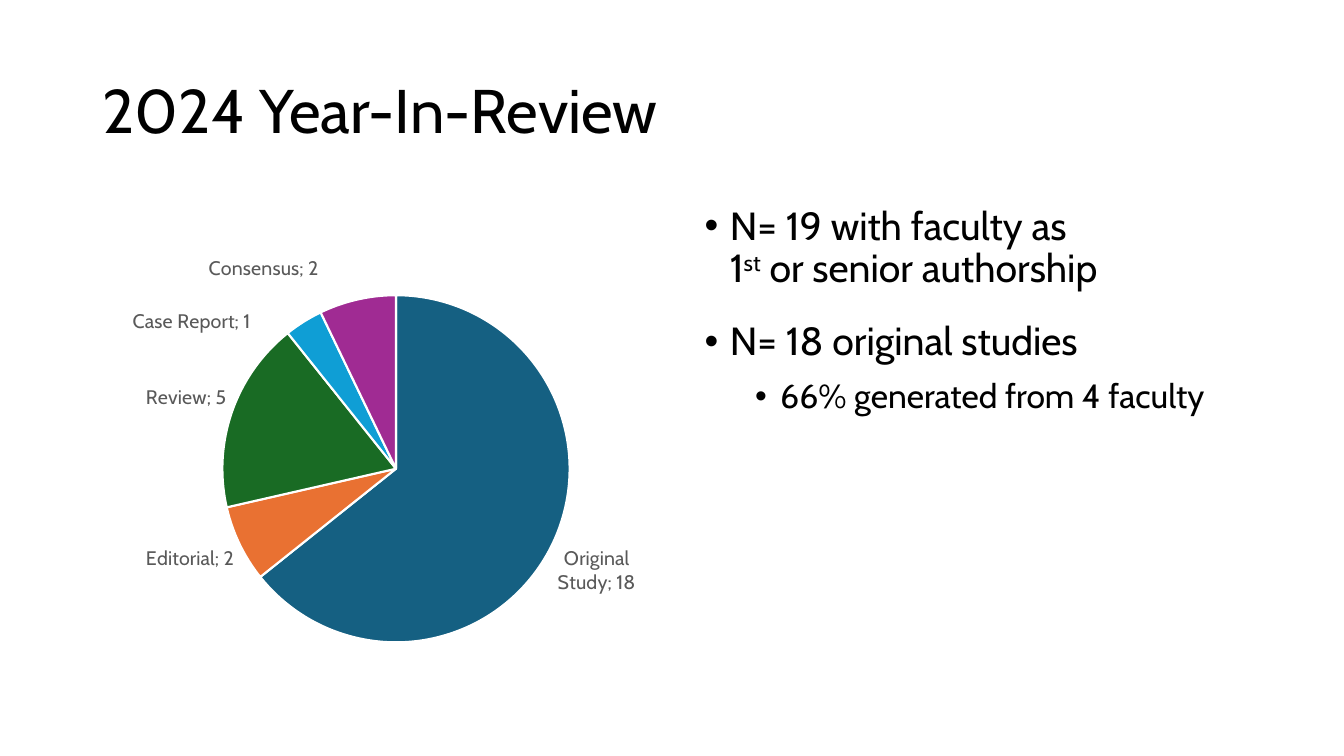
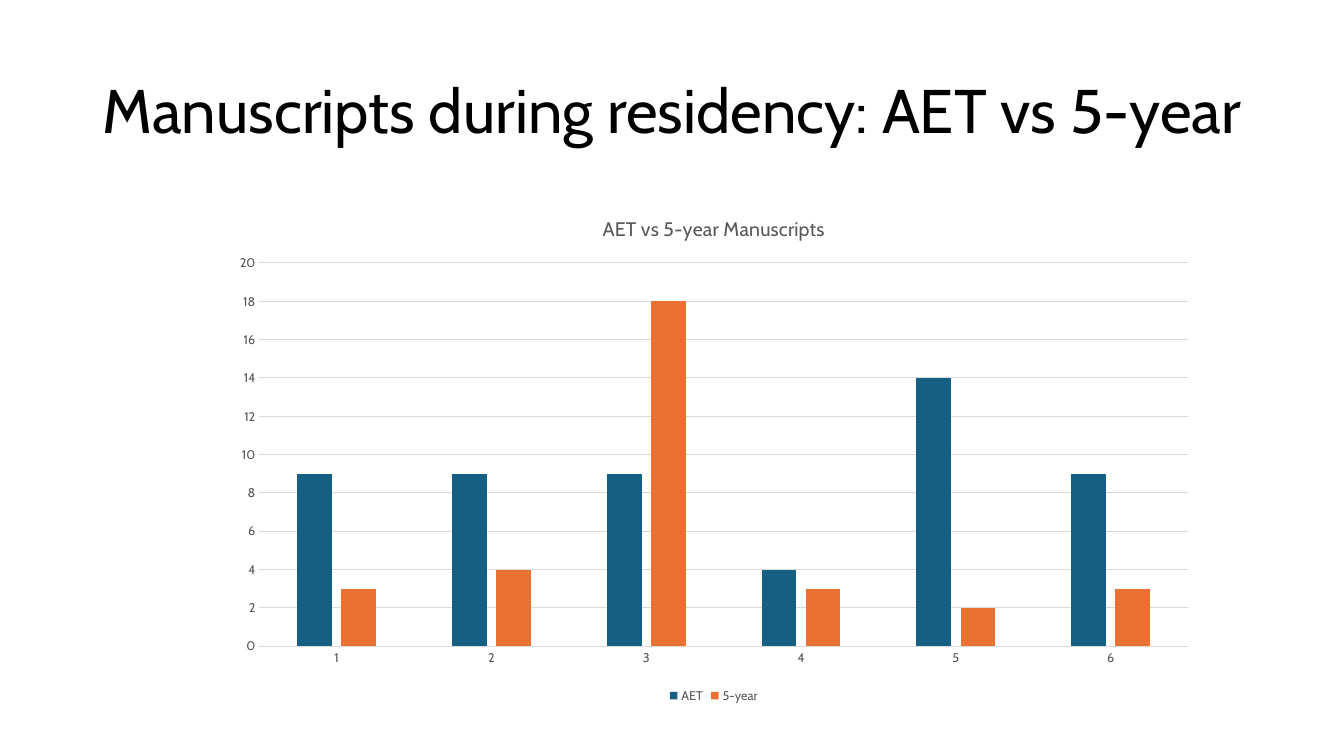
import dataclasses

import lxml.etree
import pptx
import pptx.chart.data
import pptx.dml.color
import pptx.enum.chart
import pptx.enum.text
import pptx.oxml.ns
import pptx.util

PX = 9144  # EMU, 100 px to the inch


@dataclasses.dataclass(frozen=True)
class Theme:
    font: str = "Cabin"
    ink: str = "000000"
    grey: str = "595959"
    grid: str = "D9D9D9"
    white: str = "FFFFFF"
    accents: tuple = ("156082", "E97132", "196B24", "0F9ED5", "A02B93")
    title: int = 44
    body: tuple = (28, 24)
    label: int = 14
    axis: int = 9
    line_spacing: float = 0.9


def rgb(code):
    return pptx.dml.color.RGBColor.from_string(code)


def apply(obj, **values):
    for name, value in values.items():
        setattr(obj, name, value)


def sub(parent, tag, **attrs):
    return lxml.etree.SubElement(parent, pptx.oxml.ns.qn(tag), attrs)


def layout(**values):
    """Return a c:layout element; plot areas have a width, labels only an offset."""
    node = lxml.etree.Element(pptx.oxml.ns.qn("c:layout"))
    manual = sub(node, "c:manualLayout")
    if "w" in values:
        sub(manual, "c:layoutTarget", val="inner")
        sub(manual, "c:xMode", val="edge")
        sub(manual, "c:yMode", val="edge")
    for name, value in values.items():
        sub(manual, f"c:{name}", val=str(value))
    return node


class Deck:
    """Holds the theme and the current slide."""

    def __init__(self, prs, theme):
        self.prs, self.theme, self.slide = prs, theme, None
        apply(prs, slide_width=1333 * PX, slide_height=750 * PX)

    def new_slide(self, title):
        self.slide = self.prs.slides.add_slide(self.prs.slide_layouts[6])
        tf = self.text_frame(92, 40, 1150, 145)
        tf.vertical_anchor = pptx.enum.text.MSO_ANCHOR.MIDDLE
        p = tf.paragraphs[0]
        p.line_spacing = self.theme.line_spacing
        self.run(p, title, self.theme.title)

    def text_frame(self, *box):
        tf = self.slide.shapes.add_textbox(*(n * PX for n in box)).text_frame
        tf.word_wrap = True
        return tf

    def style(self, font, size, color):
        apply(font, name=self.theme.font, size=pptx.util.Pt(size), bold=False)
        font.color.rgb = rgb(color)

    def run(self, p, text, size, raised=False):
        r = p.add_run()
        r.text = text
        self.style(r.font, size, self.theme.ink)
        if raised:
            r.font._element.set("baseline", "30000")

    def bullets(self, box, items):
        """Items are (level, space before, space after, lines of (text, raised) runs)."""
        tf = self.text_frame(*box)
        for i, (level, before, after, lines) in enumerate(items):
            p = tf.add_paragraph() if i else tf.paragraphs[0]
            apply(p, level=level, line_spacing=self.theme.line_spacing,
                  space_before=pptx.util.Pt(before), space_after=pptx.util.Pt(after))
            pPr = p._p.get_or_add_pPr()
            pPr.set("marL", str((25 + 50 * level) * PX))
            pPr.set("indent", str(-25 * PX))
            sub(pPr, "a:buFont", typeface="Arial")
            sub(pPr, "a:buChar", char="•")
            for n, line in enumerate(lines):
                if n:
                    p.add_line_break()
                for text, raised in line:
                    self.run(p, text, self.theme.body[level], raised)

    def chart(self, kind, box, categories, series, plot_area):
        data = pptx.chart.data.CategoryChartData()
        data.categories = categories
        for name, values in series.items():
            data.add_series(name, values)
        chart = self.slide.shapes.add_chart(
            kind, *(n * PX for n in box), data).chart
        apply(chart, has_title=False, has_legend=False)
        self.style(chart.font, 10, self.theme.ink)
        area = next(chart.element.iter(pptx.oxml.ns.qn("c:plotArea")))
        for old in area.findall(pptx.oxml.ns.qn("c:layout")):
            area.remove(old)
        area.insert(0, layout(**plot_area))
        return chart

    def pie(self, box, values, plot_area, label_offsets):
        """Label offsets map a slice name to its (x, y) shift as a share of the chart."""
        chart = self.chart(pptx.enum.chart.XL_CHART_TYPE.PIE, box, list(values),
                           {"Series 1": list(values.values())}, plot_area)
        ser = chart.plots[0].series[0]
        outside = pptx.enum.chart.XL_LABEL_POSITION.OUTSIDE_END
        labels = ser.data_labels
        apply(labels, show_value=True, show_category_name=True, position=outside)
        self.style(labels.font, self.theme.label, self.theme.grey)
        for i, (name, color) in enumerate(zip(values, self.theme.accents)):
            point = ser.points[i]
            self.fill(point, color)
            point.format.line.color.rgb = rgb(self.theme.white)
            point.format.line.width = pptx.util.Pt(1.5)
            if name in label_offsets:
                label = point.data_label
                self.style(label.font, self.theme.label, self.theme.grey)
                label.position = outside
        moved = chart.element.iter(pptx.oxml.ns.qn("c:dLbl"))
        for dLbl, (x, y) in zip(moved, label_offsets.values()):
            dLbl.insert(1, layout(x=x, y=y))
            dLbl.find(pptx.oxml.ns.qn("c:showCatName")).set("val", "1")
        for node in list(chart.element.iter(pptx.oxml.ns.qn("c:showBubbleSize"))):
            separator = lxml.etree.Element(pptx.oxml.ns.qn("c:separator"))
            separator.text = "; "
            node.addnext(separator)
        for node in chart.element.iter(pptx.oxml.ns.qn("c:showLeaderLines")):
            node.set("val", "0")

    def columns(self, box, title, categories, series, plot_area):
        chart = self.chart(pptx.enum.chart.XL_CHART_TYPE.COLUMN_CLUSTERED, box,
                           categories, series, plot_area)
        tf = chart.chart_title.text_frame
        tf.text = title
        self.style(tf.paragraphs[0].runs[0].font, self.theme.label, self.theme.grey)
        plot = chart.plots[0]
        apply(plot, gap_width=219, overlap=-27, vary_by_categories=False)
        for ser, color in zip(plot.series, self.theme.accents):
            self.fill(ser, color)
        chart.has_legend = True
        apply(chart.legend, include_in_layout=False,
              position=pptx.enum.chart.XL_LEGEND_POSITION.BOTTOM)
        self.style(chart.legend.font, self.theme.axis, self.theme.grey)
        for axis in (chart.category_axis, chart.value_axis):
            no_tick = pptx.enum.chart.XL_TICK_MARK.NONE
            apply(axis, major_tick_mark=no_tick, minor_tick_mark=no_tick)
            self.style(axis.tick_labels.font, self.theme.axis, self.theme.grey)
        apply(chart.value_axis, minimum_scale=0, maximum_scale=20, major_unit=2)
        chart.value_axis.format.line.fill.background()
        for part in (chart.category_axis, chart.value_axis.major_gridlines):
            part.format.line.color.rgb = rgb(self.theme.grid)
            part.format.line.width = pptx.util.Pt(0.75)

    def fill(self, part, color):
        part.format.fill.solid()
        part.format.fill.fore_color.rgb = rgb(color)


def main():
    prs = pptx.Presentation()
    deck = Deck(prs, Theme())

    deck.new_slide("2024 Year-In-Review")
    deck.bullets((689, 200, 553, 476), [
        (0, 10, 12, [[("N= 19 with faculty as", False)],
                     [("1", False), ("st", True), (" or senior authorship", False)]]),
        (0, 10, 6, [[("N= 18 original studies", False)]]),
        (1, 5, 0, [[("66% generated from 4 faculty", False)]]),
    ])
    deck.pie((73, 250, 615, 426),
             {"Original Study": 18, "Editorial": 2, "Review": 5,
              "Case Report": 1, "Consensus": 2},
             {"x": 0.24, "y": 0.1, "w": 0.56, "h": 0.81},
             {"Case Report": (-0.08, 0.04), "Consensus": (-0.06, -0.03)})

    deck.new_slide("Manuscripts during residency: AET vs 5-year")
    deck.columns((218, 195, 980, 507), "AET vs 5-year Manuscripts",
                 [str(n) for n in range(1, 7)],
                 {"AET": (9, 9, 9, 4, 14, 9), "5-year": (3, 4, 18, 3, 2, 3)},
                 {"x": 0.04, "y": 0.13, "w": 0.94, "h": 0.75})

    prs.save("out.pptx")


if __name__ == "__main__":
    main()
